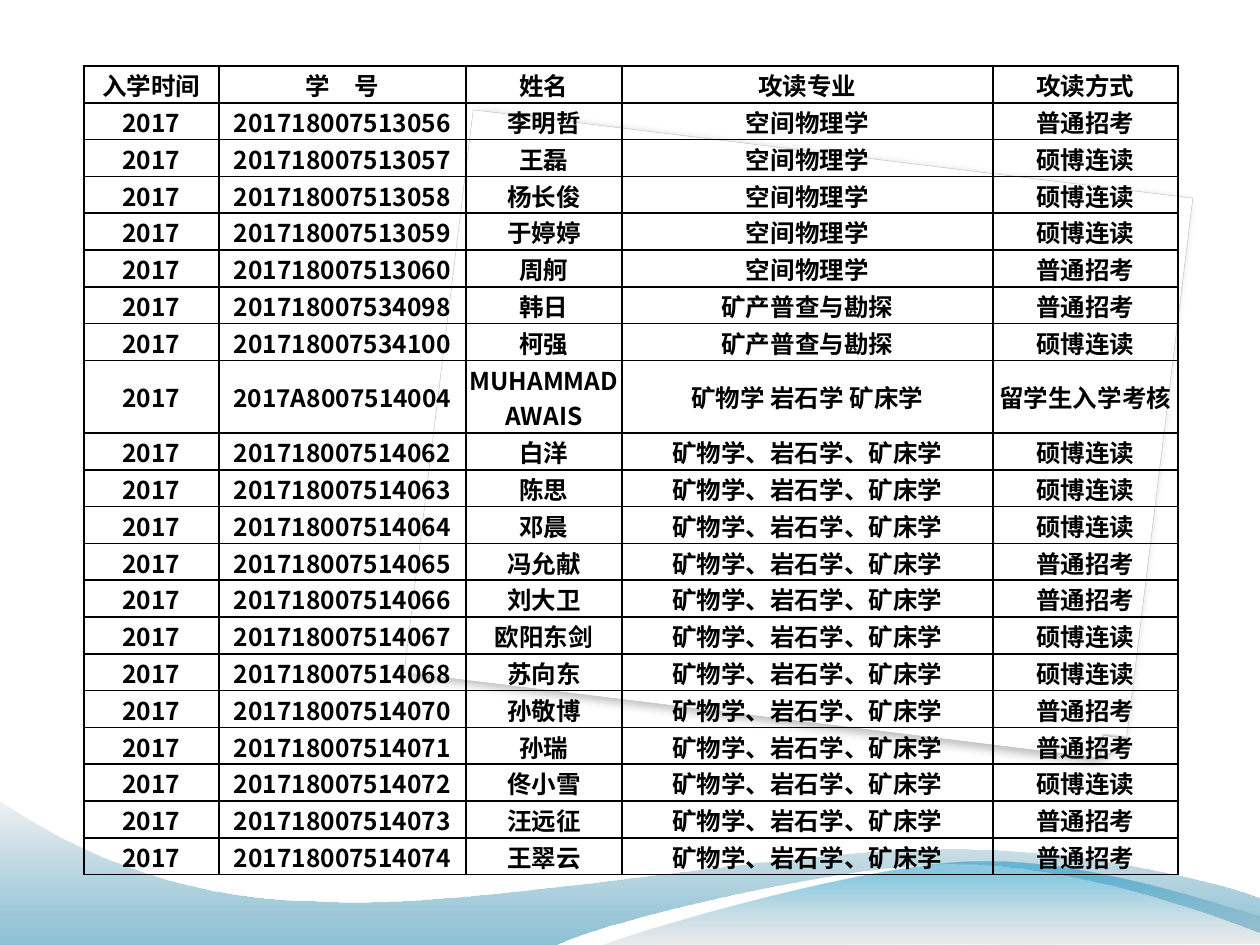
from pptx import Presentation
from pptx.dml.color import RGBColor
from pptx.enum.shapes import MSO_SHAPE
from pptx.enum.text import MSO_ANCHOR, PP_ALIGN
from pptx.oxml import parse_xml
from pptx.oxml.ns import nsdecls, qn
from pptx.util import Pt

PX = 914400 / 126
FONT = "Noto Sans CJK SC"
BLACK = RGBColor(0, 0, 0)
WHITE = RGBColor(255, 255, 255)
SILVER = RGBColor(0xC0, 0xC0, 0xC0)
DEEP = RGBColor(0x00, 0x74, 0xA1)
PALE = RGBColor(0xE7, 0xE7, 0xE7)
GREY = RGBColor(0xBD, 0xBD, 0xBD)
BLUE = RGBColor(0x00, 0x8B, 0xBF)
SNIP = MSO_SHAPE.SNIP_ROUND_RECTANGLE
WEDGE = MSO_SHAPE.RIGHT_TRIANGLE
CENTER = PP_ALIGN.CENTER
MIDDLE = MSO_ANCHOR.MIDDLE


def px(n):
    return round(n * PX)


def bend(shape, start, parts):
    """Make each straight segment whose part has three points a cubic curve."""
    ends = [start] + [part[-1] for part in parts]
    left = min(x for x, y in ends)
    top = min(y for x, y in ends)
    lines = list(shape._element.iter(qn("a:lnTo")))
    for line, part in zip(lines, parts):
        if len(part) == 3:
            knots = "".join(f'<a:pt x="{x - left}" y="{y - top}"/>' for x, y in part)
            line.getparent().replace(line, parse_xml(
                f'<a:cubicBezTo {nsdecls("a")}>{knots}</a:cubicBezTo>'))


deck = Presentation()
deck.slide_width, deck.slide_height = px(1260), px(945)
slide = deck.slides.add_slide(deck.slide_layouts[6])
shapes = slide.shapes

# Tilted card and its folded corner
cards = [
    (SNIP, (436, 152, 725, 567), SILVER, 0.25,
     'blurRad="63500" dist="38100" dir="7500000" sx="98500" sy="100080" kx="100000"', 25),
    (WEDGE, (1103, 738, 21, 21), WHITE, 1,
     'blurRad="20320" dist="6350" dir="12900000"', 47),
]
for kind, box, edge, width, cast, alpha in cards:
    card = shapes.add_shape(kind, *map(px, box))
    card.rotation = 7
    card.fill.solid()
    card.fill.fore_color.rgb = WHITE
    card.line.color.rgb = edge
    card.line.width = Pt(width)
    card.shadow.inherit = False
    if kind == SNIP:
        card.adjustments[0] = 0
        card.adjustments[1] = 0.04
    prop = card._element.spPr
    prop.find(qn("a:xfrm")).set("flipV", "1")
    prop.find(qn("a:effectLst")).append(parse_xml(
        f'<a:outerShdw {nsdecls("a")} {cast} algn="tl" rotWithShape="0">'
        f'<a:srgbClr val="000000"><a:alpha val="{alpha * 1000}"/></a:srgbClr>'
        '</a:outerShdw>'))

# Waves along the foot, with stops as position, colour and opacity
waves = [
    ((0, 945),
     [[(554, 945)],
      [(600, 922), (837, 864), (955, 864)],
      [(1075, 864), (1207, 912), (1260, 932)],
      [(1261, 898)],
      [(1239, 888), (1096, 848), (940, 849)],
      [(784, 849), (481, 908), (324, 901)],
      [(163, 900), (58, 839), (-1, 801)]],
     [(0, DEEP, 45), (1, PALE, 55)]),
    ((604, 945),
     [[(641, 930), (859, 866), (969, 862)],
      [(1079, 857), (1211, 903), (1260, 917)],
      [(1260, 944)]],
     [(0, GREY, 30), (0.8, BLUE, 45)]),
]
for start, parts, stops in waves:
    pen = shapes.build_freeform(*start, scale=PX)
    pen.add_line_segments([part[-1] for part in parts], close=True)
    wave = pen.convert_to_shape()
    bend(wave, start, parts)
    wave.shadow.inherit = False
    wave.line.fill.background()
    wave.fill.gradient()
    wave.fill.gradient_angle = 90
    for stop, (place, tint, alpha) in zip(wave.fill.gradient_stops, stops):
        stop.position = place
        stop.color.rgb = tint
    tints = list(wave._element.spPr.iter(qn("a:srgbClr")))
    for tint, (place, rgb, alpha) in zip(tints, stops):
        tint.append(parse_xml(f'<a:alpha {nsdecls("a")} val="{alpha * 1000}"/>'))

# Student table
SPACE = "空间物理学"
ORE = "矿产普查与勘探"
ROCK = "矿物学、岩石学、矿床学"
EXAM = "普通招考"
DIRECT = "硕博连读"
students = [
    ("201718007513056", "李明哲", SPACE, EXAM),
    ("201718007513057", "王磊", SPACE, DIRECT),
    ("201718007513058", "杨长俊", SPACE, DIRECT),
    ("201718007513059", "于婷婷", SPACE, DIRECT),
    ("201718007513060", "周舸", SPACE, EXAM),
    ("201718007534098", "韩日", ORE, EXAM),
    ("201718007534100", "柯强", ORE, DIRECT),
    ("2017A8007514004", "MUHAMMAD AWAIS", "矿物学 岩石学 矿床学", "留学生入学考核"),
    ("201718007514062", "白洋", ROCK, DIRECT),
    ("201718007514063", "陈思", ROCK, DIRECT),
    ("201718007514064", "邓晨", ROCK, DIRECT),
    ("201718007514065", "冯允献", ROCK, EXAM),
    ("201718007514066", "刘大卫", ROCK, EXAM),
    ("201718007514067", "欧阳东剑", ROCK, DIRECT),
    ("201718007514068", "苏向东", ROCK, DIRECT),
    ("201718007514070", "孙敬博", ROCK, EXAM),
    ("201718007514071", "孙瑞", ROCK, EXAM),
    ("201718007514072", "佟小雪", ROCK, DIRECT),
    ("201718007514073", "汪远征", ROCK, EXAM),
    ("201718007514074", "王翠云", ROCK, EXAM),
]
rows = [("入学时间", "学　号", "姓名", "攻读专业", "攻读方式")]
rows += [("2017", *student) for student in students]
widths = [135, 247, 156, 371, 185]
ROW, TALL = 35, 8
INSET = Pt(0.6)

frame = shapes.add_table(len(rows), len(widths), px(84), px(66),
                         px(sum(widths)), px(ROW * (len(rows) + 1)))
table = frame.table
table.first_row = table.horz_banding = False
for col, width in zip(table.columns, widths):
    col.width = px(width)
for r, row in enumerate(rows):
    table.rows[r].height = px(ROW * 2 if r == TALL else ROW)
    for c, text in enumerate(row):
        cell = table.cell(r, c)
        cell.margin_left = cell.margin_right = cell.margin_top = INSET
        cell.margin_bottom = 0
        cell.vertical_anchor = MIDDLE
        prop = cell._tc.get_or_add_tcPr()
        for side in ("lnL", "lnR", "lnT", "lnB"):
            prop.append(parse_xml(
                f'<a:{side} {nsdecls("a")} w="12700"><a:solidFill>'
                f'<a:srgbClr val="000000"/></a:solidFill></a:{side}>'))
        cell.fill.background()
        cell.text_frame.text = text
        para = cell.text_frame.paragraphs[0]
        para.alignment = CENTER
        run = para.runs[0]
        run.font.size = Pt(14)
        run.font.bold = True
        run.font.name = FONT
        run.font.color.rgb = BLACK
        run.font._element.find(qn("a:latin")).addnext(
            parse_xml(f'<a:ea {nsdecls("a")} typeface="{FONT}"/>'))

deck.save("out.pptx")
